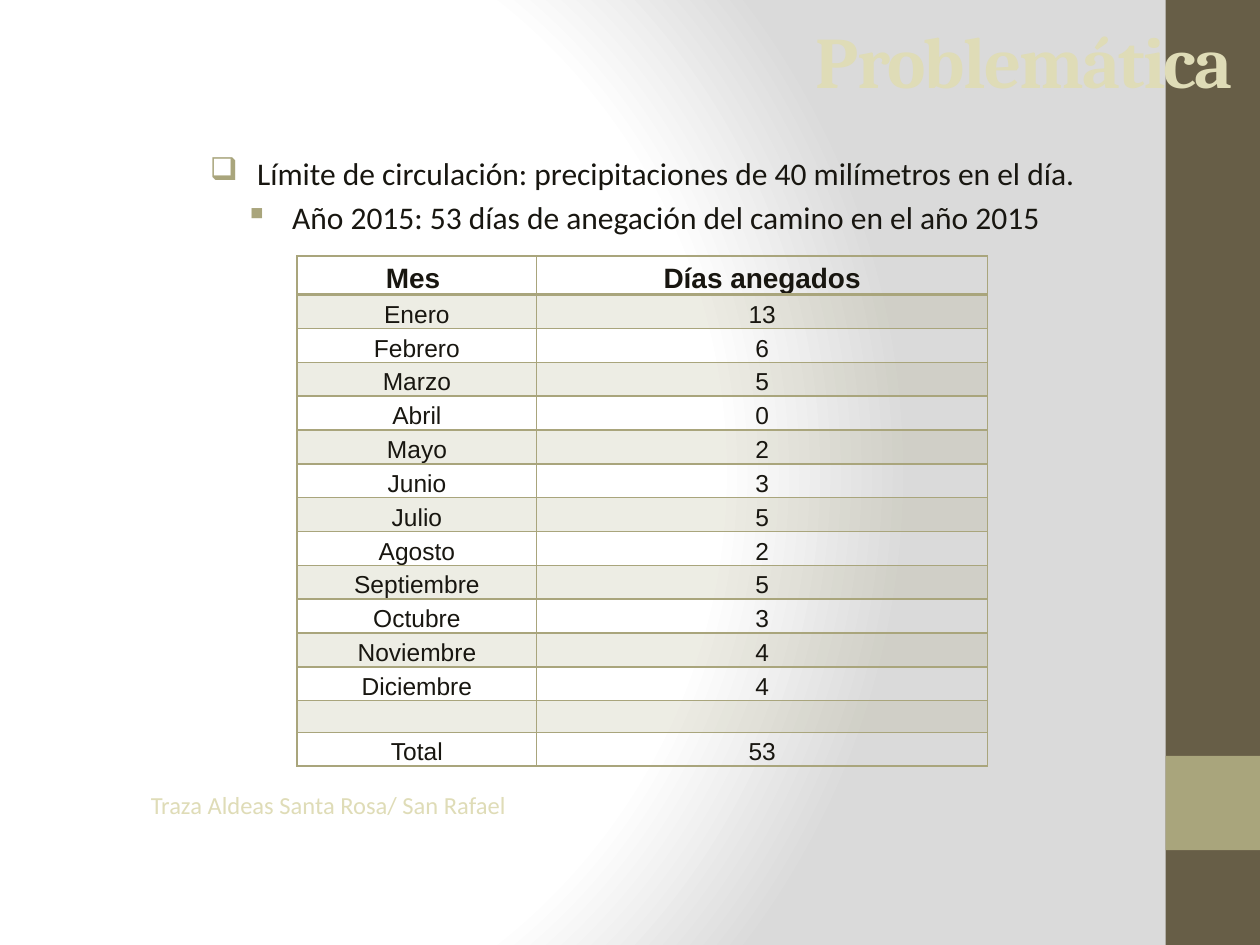
from dataclasses import dataclass

from lxml.etree import SubElement
from pptx import Presentation
from pptx.dml.color import RGBColor
from pptx.enum.shapes import MSO_SHAPE as Shape
from pptx.enum.text import MSO_ANCHOR as Anchor, PP_ALIGN as Align
from pptx.oxml import parse_xml
from pptx.oxml.ns import nsdecls, qn
from pptx.util import Cm, Pt


@dataclass(frozen=True)
class Theme:
    ink: str = "181610"
    dark: str = "675E47"
    accent: str = "A9A57C"
    pale: str = "DFDCB7"
    white: str = "FFFFFF"
    grey: str = "DADADA"
    title_font: str = "Cambria"
    body_font: str = "Calibri"
    table_font: str = "Arial"
    title_size: float = 41.4
    body_size: float = 18
    header_size: float = 16
    small_size: float = 14


class SlideBuilder:
    def __init__(self, page, theme):
        self.page = page
        self.theme = theme

    def background(self, stops, focus):
        colors = "".join(
            f'<a:gs pos="{pos * 1000}"><a:srgbClr val="{color}"/></a:gs>'
            for pos, color in stops)
        left, top, right, bottom = (edge * 1000 for edge in focus)
        self.page.element.cSld.insert(0, parse_xml(
            f'<p:bg {nsdecls("p", "a")}><p:bgPr><a:gradFill rotWithShape="1">'
            f'<a:gsLst>{colors}</a:gsLst><a:path path="circle">'
            f'<a:fillToRect l="{left}" t="{top}" r="{right}" b="{bottom}"/>'
            '</a:path></a:gradFill><a:effectLst/></p:bgPr></p:bg>'))

    def block(self, left, top, width, height, color):
        shape = self.page.shapes.add_shape(
            Shape.RECTANGLE, Cm(left), Cm(top), Cm(width), Cm(height))
        shape.shadow.inherit = False
        shape.fill.solid()
        shape.fill.fore_color.rgb = RGBColor.from_string(color)
        shape.line.fill.background()

    def text_box(self, left, top, width, height, insets, anchor=Anchor.TOP):
        box = self.page.shapes.add_textbox(Cm(left), Cm(top), Cm(width), Cm(height))
        frame = box.text_frame
        frame.word_wrap = True
        frame.vertical_anchor = anchor
        (frame.margin_left, frame.margin_top,
         frame.margin_right, frame.margin_bottom) = map(Cm, insets)
        return frame

    def span(self, para, text, font, size, color, bold=False):
        span = para.add_run()
        span.text = text
        span.font.name = font
        span.font.size = Pt(size)
        span.font.bold = bold
        span.font.color.rgb = RGBColor.from_string(color)
        return span

    def bullet(self, para, mark, indent):
        props = para._p.get_or_add_pPr()
        props.set("marL", str(Cm(indent)))
        props.set("indent", str(-Cm(indent)))
        color = SubElement(props, qn("a:buClr"))
        SubElement(color, qn("a:srgbClr")).set("val", self.theme.accent)
        SubElement(props, qn("a:buChar")).set("char", mark)

    def borders(self, cell, bottom):
        props = cell._tc.get_or_add_tcPr()
        sides = {"L": 1, "R": 1, "T": 1, "B": bottom}
        for place, (side, width) in enumerate(sides.items()):
            props.insert(place, parse_xml(
                f'<a:ln{side} {nsdecls("a")} w="{Pt(width)}"><a:solidFill>'
                f'<a:srgbClr val="{self.theme.accent}"/></a:solidFill></a:ln{side}>'))

    def cell(self, cell, text, header, banded):
        theme = self.theme
        cell.vertical_anchor = Anchor.BOTTOM
        cell.margin_left = cell.margin_right = Cm(0.12)
        cell.margin_top = cell.margin_bottom = 0
        if banded:
            cell.fill.solid()
            cell.fill.fore_color.rgb = RGBColor.from_string(theme.accent)
            color = cell._tc.tcPr.find(".//" + qn("a:srgbClr"))
            SubElement(color, qn("a:alpha")).set("val", "20000")
        else:
            cell.fill.background()
        self.borders(cell, bottom=2 if header else 1)

        para = cell.text_frame.paragraphs[0]
        para.alignment = Align.CENTER
        para.line_spacing = 1.15
        para.space_after = Pt(10)
        size = theme.header_size if header else theme.small_size
        if text:
            self.span(para, text, theme.table_font, size, theme.ink, header)
        else:
            para._p.get_or_add_endParaRPr().set("sz", str(size * 100))

    def table(self, left, top, widths, header_height, row_height, rows):
        heights = [header_height] + [row_height] * (len(rows) - 1)
        table = self.page.shapes.add_table(
            len(rows), len(widths), Cm(left), Cm(top),
            Cm(sum(widths)), Cm(sum(heights))).table
        table.first_row = table.horz_banding = False
        for column, width in zip(table.columns, widths):
            column.width = Cm(width)
        for r, (row, height) in enumerate(zip(rows, heights)):
            table.rows[r].height = Cm(height)
            for c, text in enumerate(row):
                self.cell(table.cell(r, c), text, header=r == 0, banded=r % 2 == 1)


def main():
    theme = Theme()
    deck = Presentation()
    deck.slide_width, deck.slide_height = Cm(25.4), Cm(19.05)
    slide = SlideBuilder(deck.slides.add_slide(deck.slide_layouts[6]), theme)

    # Background and side band
    slide.background([(0, theme.white), (75, theme.white), (100, theme.grey)],
                     focus=(20, 50, 100, 50))
    slide.block(23.5, 0, 1.9, 19.05, theme.dark)
    slide.block(23.5, 15.24, 1.9, 1.9, theme.accent)

    # Caption
    body_insets = (0.2, 0.2, 0.2, 0.2)
    para = slide.text_box(2.06, 15.72, 9.12, 1.96, body_insets).paragraphs[0]
    para.alignment = Align.CENTER
    slide.span(para, "Traza Aldeas Santa Rosa/ San Rafael",
               theme.body_font, theme.small_size, theme.pale)

    # Bullet points
    points = [
        ("❑", "Límite de circulación: precipitaciones de 40 milímetros en el día."),
        ("▪", "Año 2015: 53 días de anegación del camino en el año 2015"),
    ]
    frame = slide.text_box(2.01, 2.9, 21.89, 2.26, body_insets)
    for i, (mark, text) in enumerate(points):
        para = frame.add_paragraph() if i else frame.paragraphs[0]
        para.alignment = Align.CENTER
        if i:
            para.space_before = Pt(3.6)
        slide.bullet(para, mark, 0.95)
        slide.span(para, text, theme.body_font, theme.body_size, theme.ink)

    # Title
    frame = slide.text_box(0.84, 0.36, 24.26, 1.7, (0.25, 0.13, 0.25, 0.15),
                           Anchor.MIDDLE)
    para = frame.paragraphs[0]
    para.alignment = Align.RIGHT
    title = slide.span(para, "Problemática", theme.title_font,
                       theme.title_size, theme.pale, bold=True)
    title.font._element.set("spc", "-100")

    # Flooded days by month
    flooded_days = [
        ("Mes ", "Días anegados"),
        ("Enero", "13"), ("Febrero", "6"), ("Marzo", "5"), ("Abril", "0"),
        ("Mayo", "2"), ("Junio", "3"), ("Julio", "5"), ("Agosto", "2"),
        ("Septiembre", "5"), ("Octubre", "3"), ("Noviembre", "4"),
        ("Diciembre", "4"), ("", ""), ("Total", "53"),
    ]
    slide.table(5.99, 5.16, widths=(4.83, 9.09), header_height=0.73,
                row_height=0.64, rows=flooded_days)

    deck.save("out.pptx")


if __name__ == "__main__":
    main()
